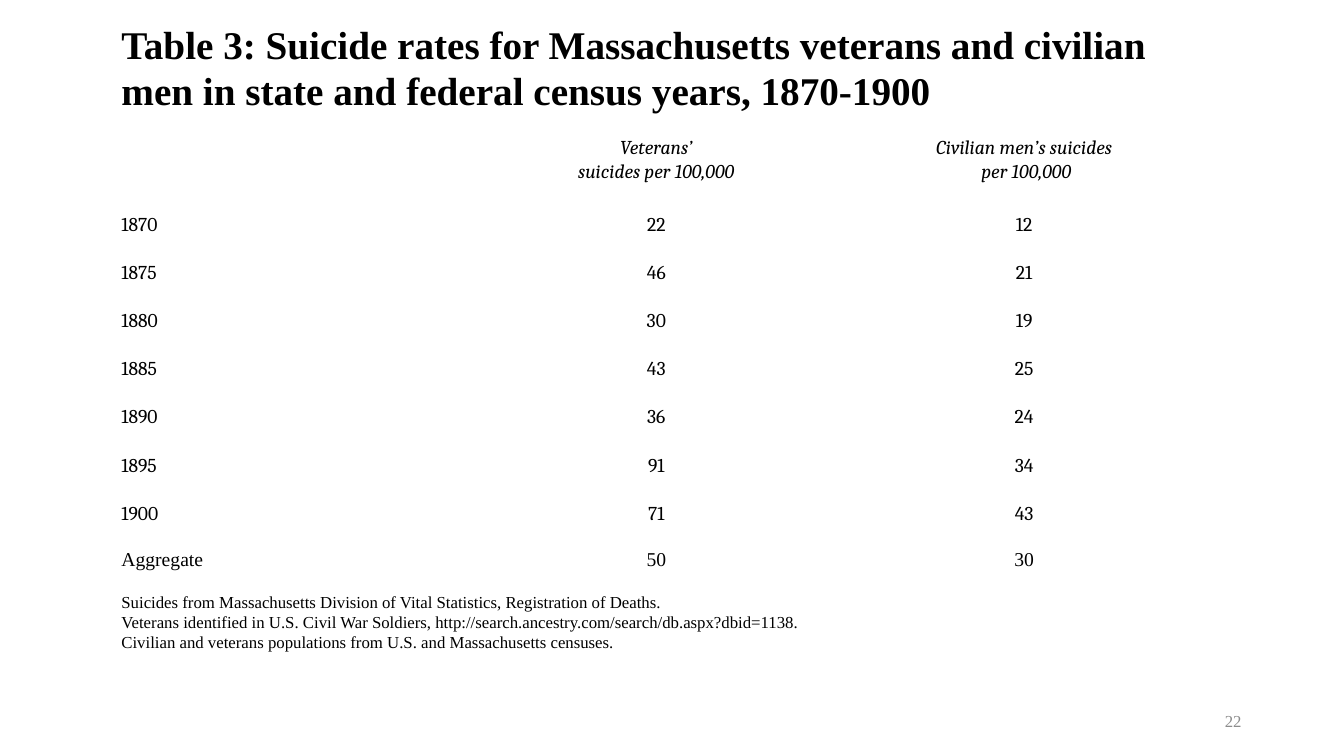
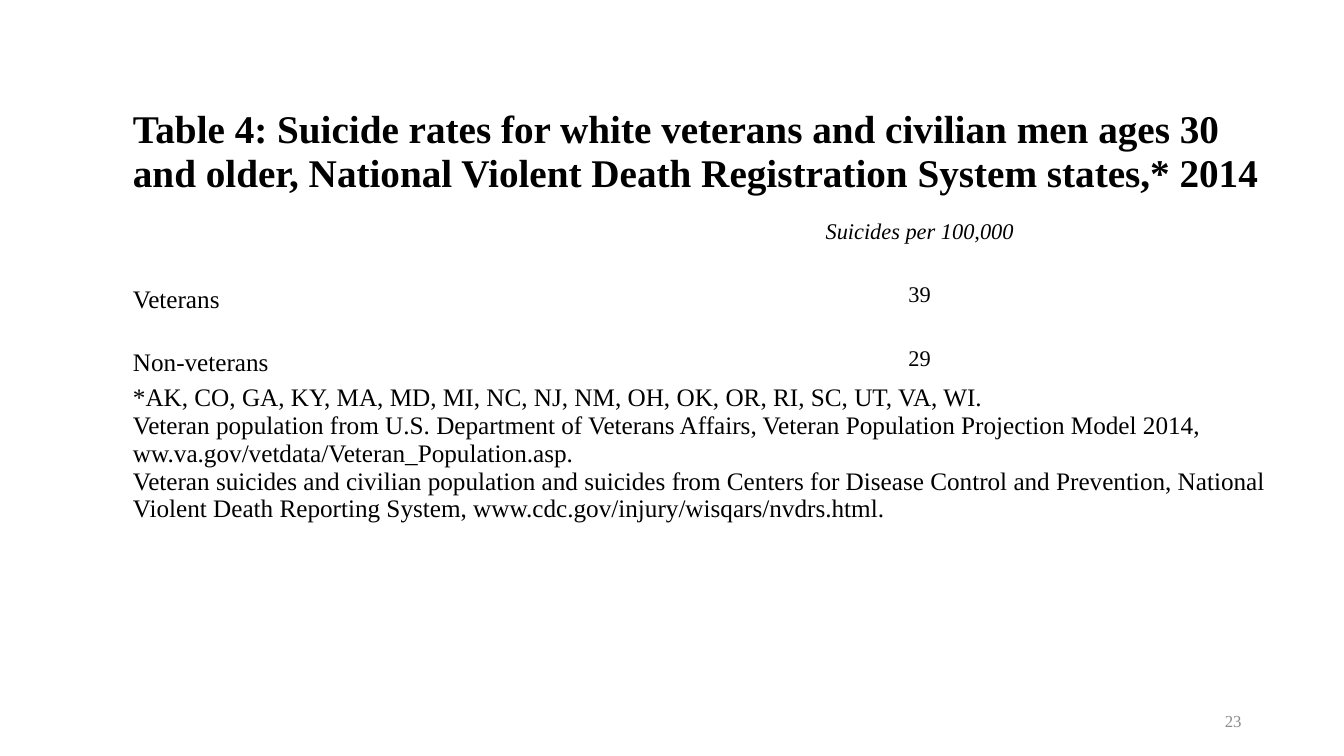
"""Build two slides of suicide rate tables for veterans and civilian men."""
from dataclasses import dataclass

from lxml import etree
from pptx import Presentation
from pptx import util as u
from pptx.dml.color import RGBColor
from pptx.enum import text
from pptx.oxml import ns

BLACK = RGBColor(0x00, 0x00, 0x00)
GRAY = RGBColor(0x8C, 0x8C, 0x8C)
SERIF = "Times New Roman"
LEFT, CENTER, RIGHT = text.PP_ALIGN.LEFT, text.PP_ALIGN.CENTER, text.PP_ALIGN.RIGHT
CELL_MARGINS = {
    "margin_left": u.Cm(0.19),
    "margin_right": u.Cm(0.19),
    "margin_top": 0,
    "margin_bottom": 0,
}


@dataclass(frozen=True)
class Style:
    """Text format of a cell or box."""

    size: float
    spacing: float = 1.0
    name: str = SERIF
    bold: bool = False
    italic: bool = False
    color: RGBColor = BLACK


@dataclass(frozen=True)
class Row:
    """Table row: height in cm, cell texts, and styles for label and values."""

    height: float
    cells: tuple[str, ...]
    label: Style
    value: Style | None = None


@dataclass(frozen=True)
class RateTable:
    """One slide's table; lengths in cm. A row with one text spans all columns."""

    page: int
    left: float
    top: float
    columns: tuple[float, ...]
    rows: tuple[Row, ...]


LOOSE = 1.07
DOUBLE = 2.0
CAMBRIA = Style(14, LOOSE, "Cambria")
CAMBRIA_HEADER = Style(14, LOOSE, "Cambria", italic=True)
AGGREGATE = Style(14, LOOSE)
GROUP_LABEL = Style(18, DOUBLE)
GROUP_VALUE = Style(16, DOUBLE)
PAGE_NUMBER = Style(12, color=GRAY)
EMPTY_CELLS = ("", "", "")
SPACER = Row(0.42, EMPTY_CELLS, CAMBRIA)

CENSUS_RATES = (
    ("1870", "22", "12"),
    ("1875", "46", "21"),
    ("1880", "30", "19"),
    ("1885", "43", "25"),
    ("1890", "36", "24"),
    ("1895", "91", "34"),
)

CENSUS_TABLE = RateTable(22, 2.87, 0.53, (8.97, 9.4, 9.14), (
    Row(2.88, (
        "Table 3: Suicide rates for Massachusetts veterans and civilian men "
        "in state and federal census years, 1870-1900",
    ), Style(28, LOOSE, bold=True)),
    Row(1.24, (
        "",
        "Veterans’\nsuicides per 100,000",
        "Civilian men’s suicides\n per 100,000",
    ), CAMBRIA_HEADER),
    Row(0.71, EMPTY_CELLS, CAMBRIA),
    *(Row(1.21, rates, CAMBRIA) for rates in CENSUS_RATES),
    Row(0.75, ("1900", "71", "43"), CAMBRIA),
    SPACER,
    Row(0.72, ("Aggregate", "50", "30"), AGGREGATE),
    SPACER,
    Row(1.53, (
        "Suicides from Massachusetts Division of Vital Statistics, Registration of Deaths.\n"
        "Veterans identified in U.S. Civil War Soldiers, "
        "http://search.ancestry.com/search/db.aspx?dbid=1138.\n"
        "Civilian and veterans populations from U.S. and Massachusetts censuses.",
    ), Style(12, LOOSE)),
))

STATES_TABLE = RateTable(23, 3.16, 2.74, (10.97, 18.09), (
    Row(2.2, (
        "Table 4: Suicide rates for white veterans and civilian men ages 30 and older, "
        "National Violent Death Registration System states,* 2014",
    ), Style(28, bold=True)),
    Row(1.38, ("", "Suicides per 100,000"), Style(16, 1.68, italic=True)),
    Row(1.6, ("Veterans", "39"), GROUP_LABEL, GROUP_VALUE),
    Row(1.58, ("Non-veterans", "29"), GROUP_LABEL, GROUP_VALUE),
    Row(3.52, (
        "*AK, CO, GA, KY, MA, MD, MI, NC, NJ, NM, OH, OK, OR, RI, SC, UT, VA, WI.\n"
        "Veteran population from U.S. Department of Veterans Affairs, Veteran Population "
        "Projection Model 2014, ww.va.gov/vetdata/Veteran_Population.asp.\n"
        "Veteran suicides and civilian population and suicides from Centers for Disease "
        "Control and Prevention, National Violent Death Reporting System, "
        "www.cdc.gov/injury/wisqars/nvdrs.html.",
    ), Style(18)),
))


def set_format(target, values: dict) -> None:
    """Set each attribute named in the dict."""
    for name, value in values.items():
        setattr(target, name, value)


def write(frame, content: str, style: Style, alignment) -> None:
    """Write one paragraph per line of content."""
    for index, line in enumerate(content.split("\n")):
        paragraph = frame.add_paragraph() if index else frame.paragraphs[0]
        set_format(paragraph, {"alignment": alignment, "line_spacing": style.spacing})
        run = paragraph.add_run()
        run.text = line
        set_format(run.font, {
            "size": u.Pt(style.size),
            "name": style.name,
            "bold": style.bold,
            "italic": style.italic,
        })
        run.font.color.rgb = style.color


def shrink_empty(frame) -> None:
    """Keep an empty cell from stretching its row."""
    etree.SubElement(frame.paragraphs[0]._p, ns.qn("a:endParaRPr"), sz="600")


def add_rate_table(slide, rate_table: RateTable) -> None:
    """Draw the table with plain, unfilled cells."""
    columns, rows = rate_table.columns, rate_table.rows
    table = slide.shapes.add_table(
        len(rows), len(columns),
        u.Cm(rate_table.left), u.Cm(rate_table.top),
        u.Cm(sum(columns)), u.Cm(sum(row.height for row in rows)),
    ).table
    set_format(table, {"first_row": False, "horz_banding": False})
    for column, width in zip(table.columns, columns):
        column.width = u.Cm(width)
    for row_index, row in enumerate(rows):
        table.rows[row_index].height = u.Cm(row.height)
        for cell in table.rows[row_index].cells:
            set_format(cell, CELL_MARGINS)
            cell.fill.background()
        if len(row.cells) == 1:
            table.cell(row_index, 0).merge(table.cell(row_index, len(columns) - 1))
        for column_index, content in enumerate(row.cells):
            frame = table.cell(row_index, column_index).text_frame
            if content:
                style = (row.value or row.label) if column_index else row.label
                write(frame, content, style, CENTER if column_index else LEFT)
            else:
                shrink_empty(frame)


def add_page_number(slide, page: int) -> None:
    """Put the page number at the lower right."""
    box = slide.shapes.add_textbox(u.Cm(23.92), u.Cm(17.65), u.Cm(7.62), u.Cm(1.02))
    frame = box.text_frame
    set_format(frame, {"word_wrap": True, "vertical_anchor": text.MSO_ANCHOR.MIDDLE})
    write(frame, str(page), PAGE_NUMBER, RIGHT)


def main() -> None:
    """Build and save the presentation."""
    presentation = Presentation()
    set_format(presentation, {"slide_width": u.Cm(33.87), "slide_height": u.Cm(19.05)})
    for rate_table in (CENSUS_TABLE, STATES_TABLE):
        slide = presentation.slides.add_slide(presentation.slide_layouts[6])
        add_rate_table(slide, rate_table)
        add_page_number(slide, rate_table.page)
    presentation.save("out.pptx")


if __name__ == "__main__":
    main()
